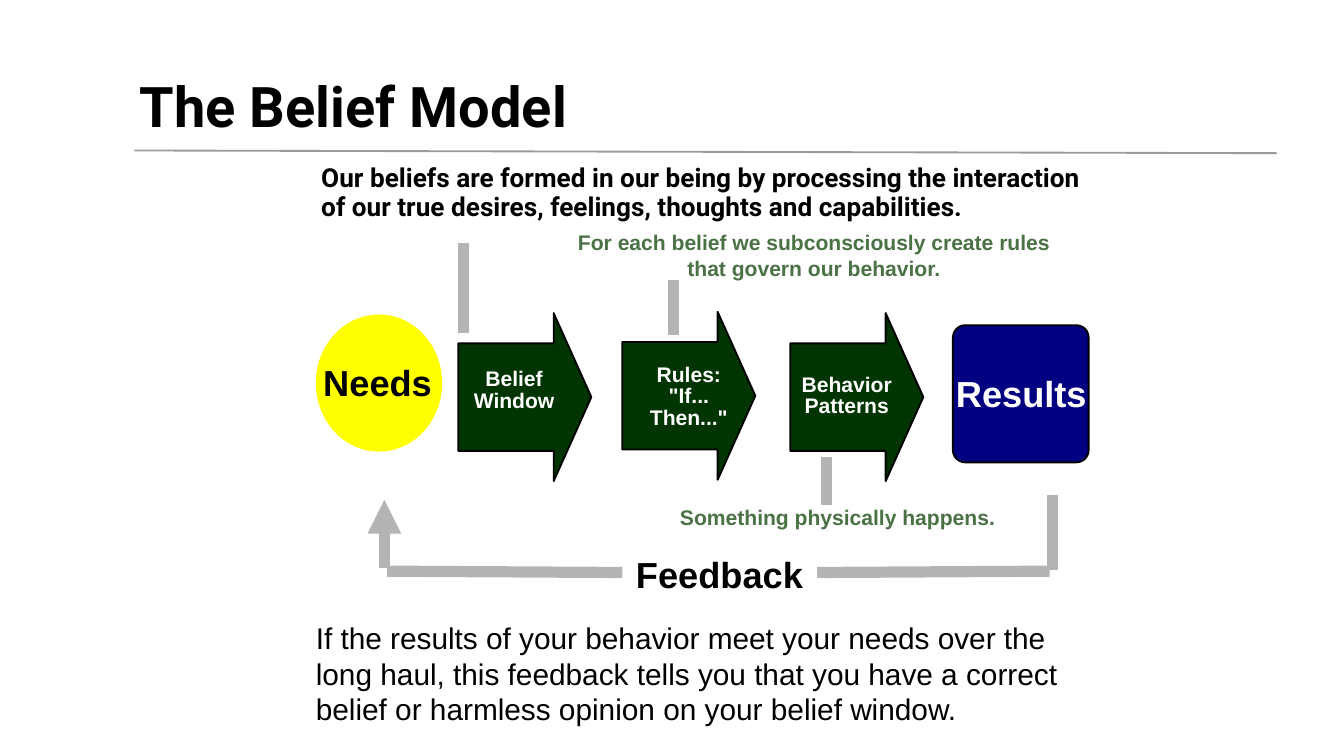
from pptx import Presentation
from pptx.dml.color import RGBColor
from pptx.enum.shapes import MSO_CONNECTOR, MSO_SHAPE
from pptx.enum.text import MSO_ANCHOR, MSO_AUTO_SIZE, PP_ALIGN
from pptx.oxml.ns import qn
from pptx.util import Inches, Pt
from lxml import etree

BLACK = RGBColor(0, 0, 0)
WHITE = RGBColor(0xFF, 0xFF, 0xFF)
YELLOW = RGBColor(0xFF, 0xFF, 0)
NAVY = RGBColor(0, 0, 0x80)
FOREST = RGBColor(0, 0x34, 0)
SAGE = RGBColor(0x4A, 0x72, 0x45)
GRAY = RGBColor(0xB4, 0xB4, 0xB4)
RULE = RGBColor(0x9A, 0x9A, 0x9A)

STRAIGHT = MSO_CONNECTOR.STRAIGHT
OVAL = MSO_SHAPE.OVAL
ARROW = MSO_SHAPE.RIGHT_ARROW
ROUNDED = MSO_SHAPE.ROUNDED_RECTANGLE
TOP, MIDDLE, BOTTOM = MSO_ANCHOR.TOP, MSO_ANCHOR.MIDDLE, MSO_ANCHOR.BOTTOM
LEFT, CENTER = PP_ALIGN.LEFT, PP_ALIGN.CENTER
NO_FIT = MSO_AUTO_SIZE.NONE

ARROW_W, ARROW_H, HEAD_W, SHAFT_H = 0.99, 1.25, 0.28, 0.8


def set_text(shape, text, size, color=BLACK, font="Arial", bold=True,
             align=CENTER, anchor=TOP, inset=0, spacing=1, wrap=True):
    frame = shape.text_frame
    frame.text = text
    frame.auto_size = NO_FIT
    frame.word_wrap = wrap
    frame.vertical_anchor = anchor
    frame.margin_left = frame.margin_right = Inches(inset)
    frame.margin_top = frame.margin_bottom = Inches(inset)
    for para in frame.paragraphs:
        para.alignment = align
        para.line_spacing = spacing
        para.space_before = para.space_after = Pt(0)
        for run in para.runs:
            run.font.name = font
            run.font.size = Pt(size)
            run.font.bold = bold
            run.font.color.rgb = color


def add_label(slide, box, text, size, **style):
    label = slide.shapes.add_textbox(*map(Inches, box))
    set_text(label, text, size, **style)


def fill_holder(holder, box, text, size, **style):
    """Move a template placeholder and show its text without a bullet."""
    holder.left, holder.top, holder.width, holder.height = map(Inches, box)
    set_text(holder, text, size, font="Roboto", align=LEFT, inset=0.04, **style)
    for para in holder.text_frame.paragraphs:
        props = para._p.get_or_add_pPr()
        props.set("marL", "0")
        props.set("indent", "0")
        etree.SubElement(props, qn("a:buNone"))


def add_line(slide, start, end, color=GRAY, width=6, arrow=False):
    ends = map(Inches, (*start, *end))
    line = slide.shapes.add_connector(STRAIGHT, *ends)
    line.line.color.rgb = color
    line.line.width = Pt(width)
    if arrow:
        tail = etree.SubElement(line.line._get_or_add_ln(), qn("a:tailEnd"))
        tail.set("type", "triangle")
    etree.SubElement(line._element.spPr, qn("a:effectLst"))


def add_block(slide, kind, box, fill, outline=True):
    block = slide.shapes.add_shape(kind, *map(Inches, box))
    block.shadow.inherit = False
    block.fill.solid()
    block.fill.fore_color.rgb = fill
    if outline:
        block.line.color.rgb = BLACK
        block.line.width = Pt(1)
    else:
        block.line.fill.background()
    return block


def add_steps(slide):
    steps = [
        (3.41, 2.33, (3.52, 2.75, 0.61, 0.32), "Belief\nWindow"),
        (4.63, 2.32, (4.78, 2.71, 0.69, 0.49), "Rules:\n\"If...\nThen...\""),
        (5.88, 2.33, (5.96, 2.79, 0.68, 0.32), "Behavior\nPatterns"),
    ]
    for left, top, box, text in steps:
        step = add_block(slide, ARROW, (left, top, ARROW_W, ARROW_H), FOREST)
        step.adjustments[0] = SHAFT_H / ARROW_H
        step.adjustments[1] = HEAD_W / ARROW_W
        add_label(slide, box, text, 11.3, color=WHITE, anchor=MIDDLE,
                  spacing=0.85, wrap=False)


def add_ends(slide):
    add_block(slide, OVAL, (2.35, 2.34, 0.94, 1.02), YELLOW, outline=False)
    results = add_block(slide, ROUNDED, (7.09, 2.42, 1.01, 1.02), NAVY)
    results.adjustments[0] = 0.09
    add_label(slide, (2.4, 2.68, 0.82, 0.33), "Needs", 19.4,
              anchor=MIDDLE, wrap=False)
    add_label(slide, (7.11, 2.76, 0.98, 0.33), "Results", 19.4,
              color=WHITE, anchor=MIDDLE, wrap=False)


def add_feedback(slide):
    add_line(slide, (7.83, 3.68), (7.83, 4.24))
    add_line(slide, (7.81, 4.25), (6.08, 4.26))
    add_line(slide, (4.63, 4.26), (2.88, 4.25))
    add_line(slide, (2.86, 4.23), (2.86, 3.72), arrow=True)
    add_label(slide, (4.52, 4.11, 1.67, 0.33), "Feedback", 19.4, anchor=MIDDLE)


def add_notes(slide):
    """Explain the steps, each tied to its arrow by a gray bar."""
    for x, low, high in [(3.45, 2.48, 1.81), (5.01, 2.49, 2.08),
                         (6.15, 3.76, 3.4)]:
        add_line(slide, (x, low), (x, high))
    add_label(slide, (4.27, 1.71, 3.57, 0.38),
              "For each belief we subconsciously create rules "
              "that govern our behavior.", 11.3, color=SAGE)
    add_label(slide, (4.82, 3.75, 2.82, 0.19),
              "Something physically happens.", 11.3, color=SAGE)


def main():
    deck = Presentation()
    deck.slide_width = Inches(10)
    deck.slide_height = deck.slide_width * 9 // 16
    slide = deck.slides.add_slide(deck.slide_layouts[1])
    add_line(slide, (1, 1.12), (9.5, 1.14), RULE, 1)
    fill_holder(slide.shapes.title, (1, 0.26, 8.56, 0.81),
                "The Belief Model", 30, anchor=BOTTOM)
    fill_holder(slide.placeholders[1], (2.35, 1.19, 6.32, 0.5),
                "Our beliefs are formed in our being by processing the "
                "interaction \vof our true desires, feelings, thoughts and "
                "capabilities.", 14, spacing=0.9)
    add_label(slide, (2.35, 4.61, 6.32, 0.7),
              "If the results of your behavior meet your needs over the \v"
              "long haul, this feedback tells you that you have a correct \v"
              "belief or harmless opinion on your belief window.",
              16, bold=False, align=LEFT)
    add_ends(slide)
    add_steps(slide)
    add_feedback(slide)
    add_notes(slide)
    deck.save("out.pptx")


if __name__ == "__main__":
    main()
